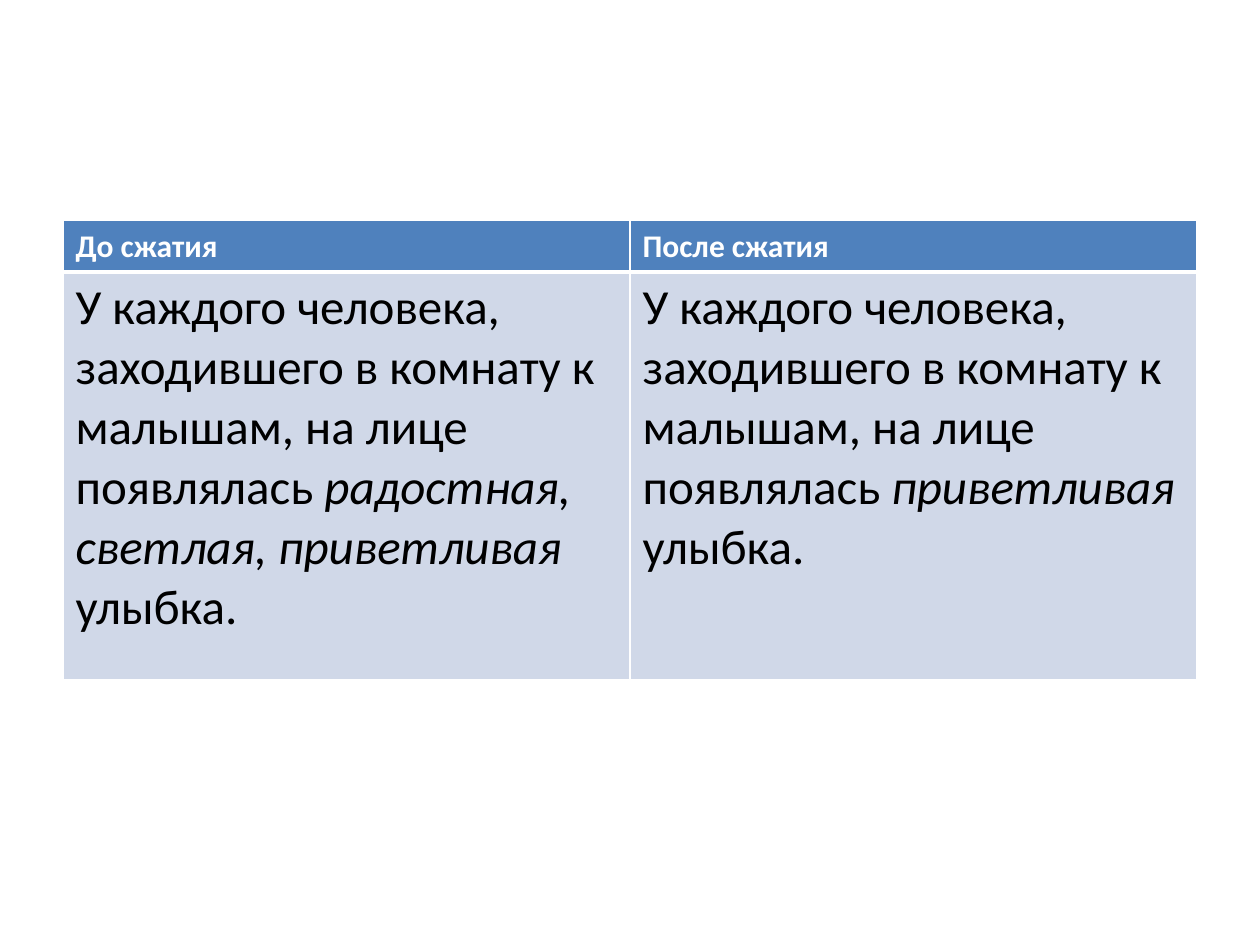
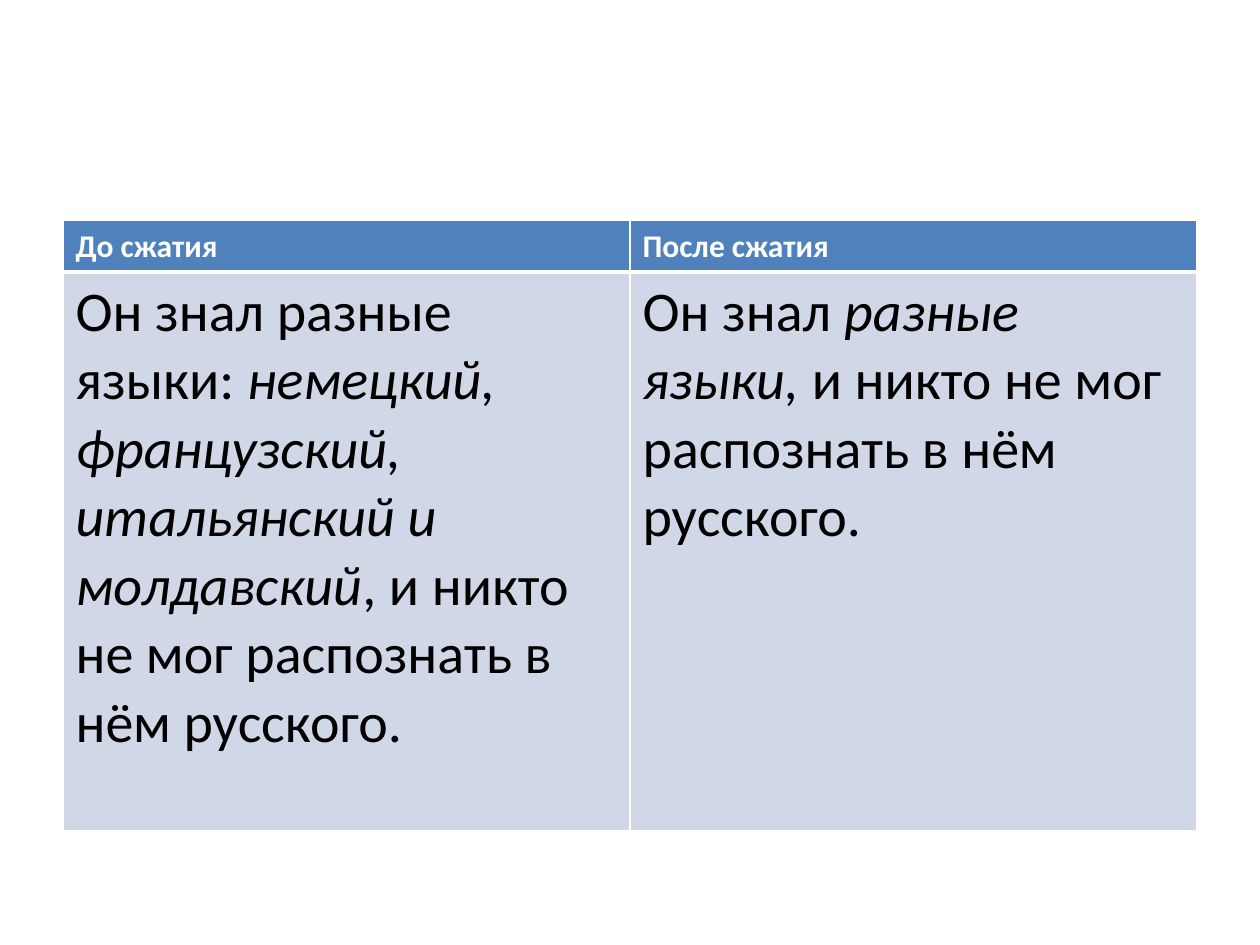
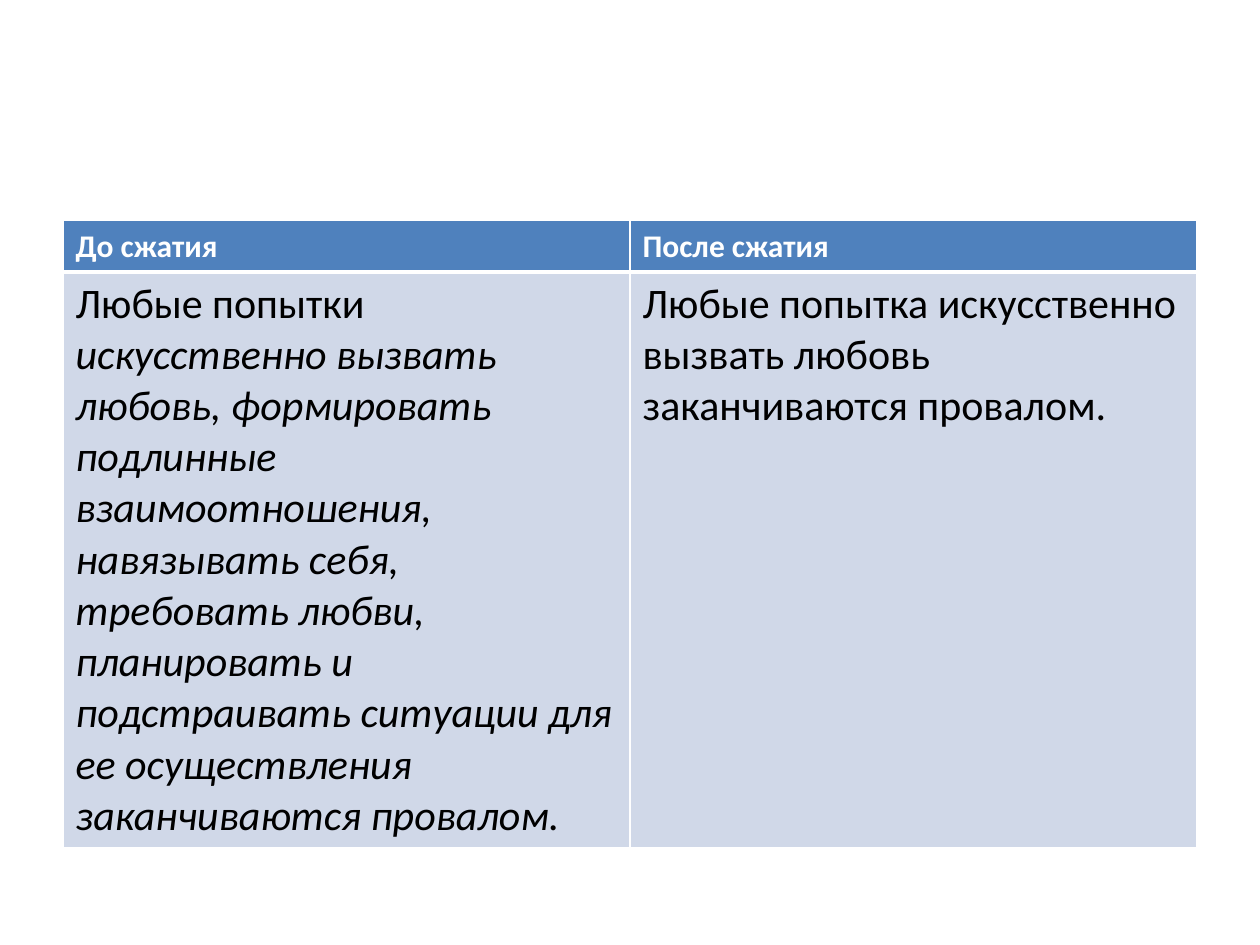
from lxml.etree import SubElement as Sub
from pptx import Presentation
from pptx.dml.color import RGBColor as Rgb
from pptx.oxml.ns import qn
from pptx.util import Cm, Pt

WHITE = Rgb(0xFF, 0xFF, 0xFF)
BLACK = Rgb(0, 0, 0)
BLUE = Rgb(0x4F, 0x81, 0xBD)
PALE = Rgb(0xD0, 0xD8, 0xE8)
FONT = "Calibri"
HEADS = ("До сжатия", "После сжатия")
HEAD_H = Cm(1.03)
BOX = (Cm(1.27), Cm(4.45), Cm(22.86))

PAGES = [
    (28, Cm(8.23),
     [("У каждого человека, заходившего в комнату к малышам, на лице появлялась ", False),
      ("радостная, светлая, приветливая", True),
      (" улыбка.", False)],
     [("У каждого человека, заходившего в комнату к малышам, на лице появлялась ", False),
      ("приветливая", True),
      (" улыбка.", False)]),
    (32, Cm(11.27),
     [("Он знал разные языки: ", False),
      ("немецкий, французский, итальянский и молдавский", True),
      (", и никто не мог распознать в нём русского.", False)],
     [("Он знал ", False),
      ("разные языки, ", True),
      ("и никто не мог распознать в нём русского.", False)]),
    (24, Cm(11.6),
     [("Любые попытки ", False),
      ("искусственно вызвать любовь, формировать подлинные взаимоотношения, "
       "навязывать себя, требовать любви, планировать и подстраивать ситуации "
       "для ее осуществления заканчиваются провалом.", True)],
     [("Любые попытка искусственно вызвать любовь заканчиваются провалом.", False)]),
]


def add_edges(cell, top, low):
    """Draw white borders round a cell, with the given top and bottom widths."""
    props = cell._tc.get_or_add_tcPr()
    for side, width in (("L", 1), ("R", 1), ("T", top), ("B", low)):
        line = Sub(props, qn(f"a:ln{side}"), w=str(Pt(width)))
        Sub(Sub(line, qn("a:solidFill")), qn("a:srgbClr"), val=str(WHITE))


def fill_cell(cell, runs, size, ink, back, bold=False):
    """Colour a cell and write its runs of text."""
    cell.fill.solid()
    cell.fill.fore_color.rgb = back
    para = cell.text_frame.paragraphs[0]
    for text, slant in runs:
        run = para.add_run()
        run.text = text
        font = run.font
        font.name, font.size = FONT, Pt(size)
        font.bold, font.italic = bold, slant
        font.color.rgb = ink


def add_pair(slide, box, size, body_h, before, after):
    """Place a two-column table of the text before and after in the box."""
    left, top, width = box
    frame = slide.shapes.add_table(2, 2, left, top, width, HEAD_H + body_h)
    table = frame.table
    table.rows[0].height, table.rows[1].height = HEAD_H, body_h
    for col, (head, runs) in enumerate(zip(HEADS, (before, after))):
        upper, lower = table.cell(0, col), table.cell(1, col)
        add_edges(upper, 1, 3)
        add_edges(lower, 3, 1)
        fill_cell(upper, [(head, False)], 18, WHITE, BLUE, True)
        fill_cell(lower, runs, size, BLACK, PALE)


def main():
    """Build the deck and save it."""
    deck = Presentation()
    deck.slide_width, deck.slide_height = Cm(25.4), Cm(19.05)
    for page in PAGES:
        slide = deck.slides.add_slide(deck.slide_layouts[6])
        add_pair(slide, BOX, *page)
    deck.save("out.pptx")


if __name__ == "__main__":
    main()
